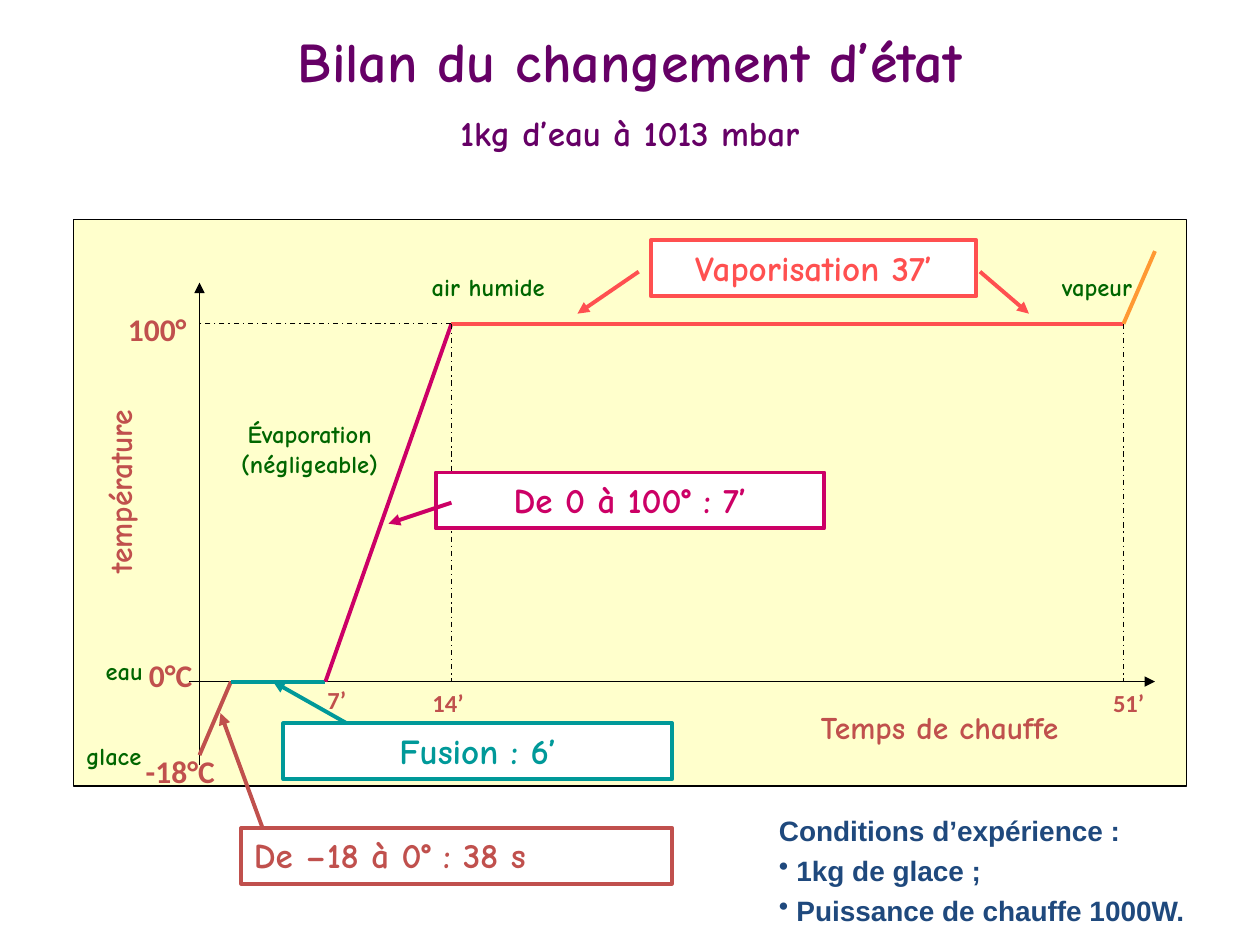
from typing import NamedTuple, Optional

from lxml import etree
from pptx import Presentation
from pptx.dml.color import RGBColor
from pptx.enum.dml import MSO_LINE
from pptx.enum.shapes import MSO_CONNECTOR, MSO_SHAPE
from pptx.enum.text import MSO_ANCHOR, MSO_AUTO_SIZE, PP_ALIGN
from pptx.oxml.ns import qn
from pptx.util import Pt

RECT = MSO_SHAPE.RECTANGLE
STRAIGHT = MSO_CONNECTOR.STRAIGHT
DASH_DOT = MSO_LINE.DASH_DOT
FIT = MSO_AUTO_SIZE.SHAPE_TO_FIT_TEXT
TOP = MSO_ANCHOR.TOP
LEFT, CENTER = PP_ALIGN.LEFT, PP_ALIGN.CENTER

COMIC, CALIBRI, ARIAL = "Comic Neue", "Calibri", "Arial"
BLACK, WHITE, CREAM = "000000", "FFFFFF", "FFFFCC"
BRICK, TEAL, MAGENTA, CORAL = "C0504D", "009999", "CC0066", "FF5050"
ORANGE, GREEN, PURPLE, NAVY = "FF9933", "006600", "660066", "1F497D"

X_START, X_ICE, X_MELTED, X_BOIL, X_STEAM, X_END = 114, 132, 186, 258, 642, 660
Y_ICE, Y_ZERO, Y_HUNDRED, Y_STEAM = 431.5, 389.5, 185, 143.5


class Line(NamedTuple):
    x1: float
    y1: float
    x2: float
    y2: float
    color: str = BLACK
    width: float = 0.75
    dashed: bool = False
    arrow: bool = False


class Label(NamedTuple):
    text: str
    x: float
    y: float
    w: float
    h: float
    size: float
    color: str
    font: str = COMIC
    align: PP_ALIGN = CENTER
    rotation: float = 0


class Callout(NamedTuple):
    text: str
    x: float
    y: float
    w: float
    color: str
    align: PP_ALIGN = CENTER


LINES = [
    Line(108, Y_ZERO, X_END, Y_ZERO, arrow=True),
    Line(X_START, 437, X_START, 161.5, arrow=True),
    Line(X_START, Y_ICE, X_ICE, Y_ZERO, BRICK, 2.25),
    Line(X_ICE, Y_ZERO, X_MELTED, Y_ZERO, TEAL, 2.25),
    Line(X_MELTED, Y_ZERO, X_BOIL, Y_HUNDRED, MAGENTA, 2.25),
    Line(X_BOIL, Y_HUNDRED, X_STEAM, Y_HUNDRED, CORAL, 2.25),
    Line(X_STEAM, Y_HUNDRED, X_END, Y_STEAM, ORANGE, 2.25),
    Line(X_BOIL, Y_HUNDRED, X_START, Y_HUNDRED, dashed=True),
    Line(X_BOIL, Y_HUNDRED, X_BOIL, Y_ZERO, dashed=True),
    Line(X_STEAM, Y_HUNDRED, X_STEAM, Y_ZERO, dashed=True),
]

CALLOUTS = [
    Callout("Vaporisation 37’", 372, 137.25, 186, CORAL),
    Callout("De 0 à 100° : 7’", 249, 270, 222, MAGENTA),
    Callout("Fusion : 6’", 162, 413.25, 222, TEAL),
    Callout("De –18 à 0° : 38 s", 138, 473, 246, BRICK, LEFT),
]

POINTERS = [
    Line(198, 413.25, 156, Y_ZERO, TEAL, 2.25, arrow=True),
    Line(258, 287.25, 222, 299.25, MAGENTA, 2.25, arrow=True),
    Line(365, 155.25, 330, 179.25, CORAL, 2.25, arrow=True),
    Line(560, 155.25, 588, 179.25, CORAL, 2.25, arrow=True),
    Line(150, 473, 126, 407.5, BRICK, 2.25, arrow=True),
]

LABELS = [
    Label("Temps de chauffe", 462, 401, 192, 29, 18, BRICK, align=LEFT),
    Label("température", -3.6, 266.4, 144, 29, 18, BRICK, rotation=270),
    Label("100°", 66, 173.5, 60, 29, 18, BRICK, CALIBRI, LEFT),
    Label("0°C", 73.5, 371.5, 48, 29, 18, BRICK, CALIBRI),
    Label("-18°C", 73.5, 426.25, 59, 29, 18, BRICK, CALIBRI),
    Label("7’", 180, 388, 48, 24.5, 14, BRICK, CALIBRI, LEFT),
    Label("14’", 240, Y_ZERO, 48, 24.5, 14, BRICK, CALIBRI, LEFT),
    Label("51’", 612, Y_ZERO, 66, 24.5, 14, BRICK, CALIBRI),
    Label("vapeur", 534, 152, 186, 24.5, 14, GREEN),
    Label("glace", 34, 420, 62, 24.5, 14, GREEN),
    Label("eau", 40, 371.5, 62, 24.5, 14, GREEN),
    Label("air humide", 186, 152, 186, 24.5, 14, GREEN),
    Label("Évaporation\n(négligeable)", 84, 236, 186, 41, 14, GREEN),
    Label("Bilan du changement d’état\n1kg d’eau à 1013 mbar", 45, 11.5, 630, 82, 32, PURPLE),
    Label("Conditions d’expérience :\n1kg de glace ;\nPuissance de chauffe 1000W.",
          438, 461.5, 264, 73.5, 16, NAVY, ARIAL, LEFT),
]


def rgb(value: str) -> RGBColor:
    return RGBColor.from_string(value)


def add_line(s, line: Line) -> None:
    cx = s.shapes.add_connector(STRAIGHT, Pt(line.x1), Pt(line.y1), Pt(line.x2), Pt(line.y2))
    cx.line.color.rgb = rgb(line.color)
    cx.line.width = Pt(line.width)
    if line.dashed:
        cx.line.dash_style = DASH_DOT
    if line.arrow:
        etree.SubElement(cx.line._get_or_add_ln(), qn("a:tailEnd"), type="triangle")
    etree.SubElement(cx._element.spPr, qn("a:effectLst"))


def add_rect(s, x: float, y: float, w: float, h: float, fill: str, line: str, width: float):
    sp = s.shapes.add_shape(RECT, Pt(x), Pt(y), Pt(w), Pt(h))
    sp.shadow.inherit = False
    sp.fill.solid()
    sp.fill.fore_color.rgb = rgb(fill)
    sp.line.color.rgb = rgb(line)
    sp.line.width = Pt(width)
    return sp


def write(sp, text: str, size: float, color: str, font: str, align: PP_ALIGN) -> None:
    tf = sp.text_frame
    tf.word_wrap = True
    tf.auto_size = FIT
    tf.vertical_anchor = TOP
    tf.text = text
    for p in tf.paragraphs:
        p.alignment = align
        for r in p.runs:
            r.font.name = font
            r.font.size = Pt(size)
            r.font.bold = True
            r.font.color.rgb = rgb(color)


def add_callout(s, c: Callout) -> None:
    sp = add_rect(s, c.x, c.y, c.w, 32, WHITE, c.color, 2.25)
    write(sp, c.text, 20, c.color, COMIC, c.align)


def add_label(s, b: Label):
    sp = s.shapes.add_textbox(Pt(b.x), Pt(b.y), Pt(b.w), Pt(b.h))
    sp.rotation = b.rotation
    write(sp, b.text, b.size, b.color, b.font, b.align)
    return sp


def add_bullet(p, indent: float, space: Optional[float] = None) -> None:
    if space is not None:
        p.space_before = Pt(space)
    pPr = p._p.get_or_add_pPr()
    pPr.set("marL", str(Pt(indent)))
    pPr.set("indent", str(-Pt(indent)))
    etree.SubElement(pPr, qn("a:buChar"), char="•")


def main() -> None:
    prs = Presentation()
    prs.slide_width, prs.slide_height = Pt(720), Pt(540)
    s = prs.slides.add_slide(prs.slide_layouts[6])
    add_rect(s, 42, 125.25, 636, 324, CREAM, BLACK, 0.75)
    for line in LINES:
        add_line(s, line)
    for callout in CALLOUTS:
        add_callout(s, callout)
    for pointer in POINTERS:
        add_line(s, pointer)
    *_, title, conditions = [add_label(s, label) for label in LABELS]
    subtitle = title.text_frame.paragraphs[1]
    subtitle.space_before = Pt(10)
    subtitle.runs[0].font.size = Pt(20)
    for p in conditions.text_frame.paragraphs[1:]:
        add_bullet(p, 10, 3.5)
    prs.save("out.pptx")


if __name__ == "__main__":
    main()
